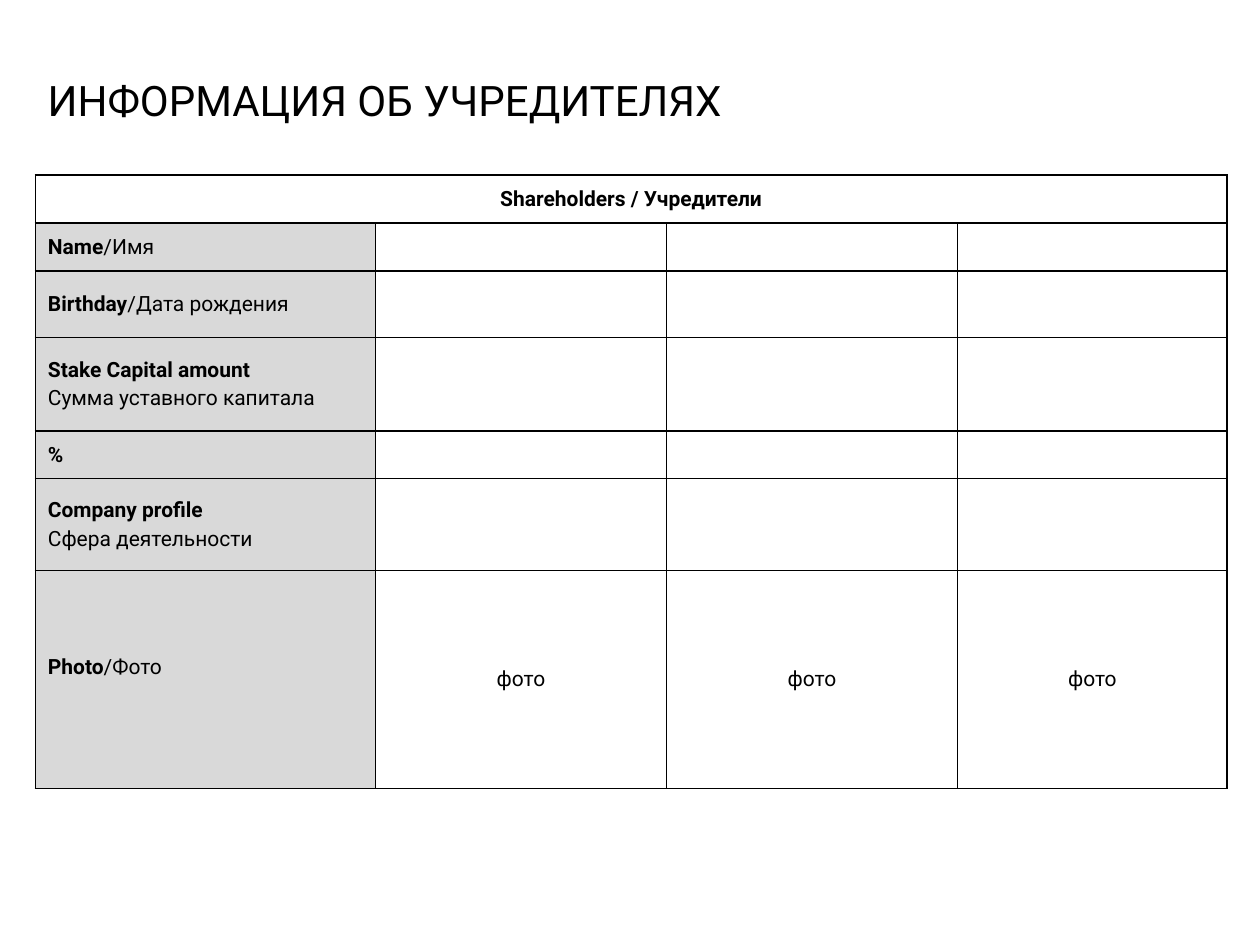
import pptx
import pptx.dml.color
import pptx.enum.text
import pptx.oxml
import pptx.oxml.ns
import pptx.util
from pptx.util import Inches

COLORS = {"ink": "000000", "label": "D9D9D9", "paper": "FFFFFF"}
ALIGN = pptx.enum.text.PP_ALIGN
MIDDLE = pptx.enum.text.MSO_ANCHOR.MIDDLE

COLUMN_WIDTHS = [2.7, 2.31, 2.31, 2.14]
ROW_HEIGHTS = [0.38, 0.38, 0.53, 0.74, 0.38, 0.73, 1.73]

# Each label is a list of lines: (bold English part, regular Russian part)
LABELS = [
    [("Name", "/Имя")],
    [("Birthday", "/Дата рождения")],
    [("Stake Capital amount", ""), ("", "Сумма уставного капитала")],
    [("%", "")],
    [("Company profile", ""), ("", "Сфера деятельности")],
    [("Photo", "/Фото")],
]


def rgb(color):
    return pptx.dml.color.RGBColor.from_string(COLORS[color])


class SlideBuilder:
    font_name = "Roboto"
    body_size = 12

    def __init__(self, slide):
        self.slide = slide

    def style(self, paragraph, size, align=ALIGN.LEFT):
        paragraph.alignment = align
        paragraph.font.name = self.font_name
        paragraph.font.size = pptx.util.Pt(size)
        paragraph.font.color.rgb = rgb("ink")

    def title(self, text, left, top, width, height):
        box = self.slide.shapes.add_textbox(
            Inches(left), Inches(top), Inches(width), Inches(height))
        frame = box.text_frame
        frame.word_wrap = True
        frame.vertical_anchor = MIDDLE
        frame.text = text
        self.style(frame.paragraphs[0], 24)

    def table(self, left, top, widths, heights):
        grid = self.slide.shapes.add_table(
            len(heights), len(widths), Inches(left), Inches(top),
            Inches(sum(widths)), Inches(sum(heights))).table
        for column, width in zip(grid.columns, widths):
            column.width = Inches(width)
        for row, height in zip(grid.rows, heights):
            row.height = Inches(height)
        return grid

    def borders(self, cell):
        properties = cell._tc.get_or_add_tcPr()
        for position, side in enumerate(("lnL", "lnR", "lnT", "lnB")):
            properties.insert(position, pptx.oxml.parse_xml(
                f'<a:{side} {pptx.oxml.ns.nsdecls("a")} w="12700"><a:solidFill>'
                f'<a:srgbClr val="{COLORS["ink"]}"/></a:solidFill></a:{side}>'))

    def cell(self, cell, lines, fill="paper", align=ALIGN.CENTER):
        cell.fill.solid()
        cell.fill.fore_color.rgb = rgb(fill)
        cell.vertical_anchor = MIDDLE
        cell.margin_left = cell.margin_right = Inches(0.1)
        cell.margin_top = cell.margin_bottom = Inches(0.04)
        self.borders(cell)
        frame = cell.text_frame
        for index, line in enumerate(lines):
            paragraph = frame.add_paragraph() if index else frame.paragraphs[0]
            self.style(paragraph, self.body_size, align)
            if index:
                paragraph.space_before = pptx.util.Pt(2.4)
            for text, bold in zip(line, (True, False)):
                if text:
                    run = paragraph.add_run()
                    run.text = text
                    run.font.bold = bold


def main():
    deck = pptx.Presentation()
    deck.slide_width, deck.slide_height = Inches(10), Inches(7.5)
    builder = SlideBuilder(deck.slides.add_slide(deck.slide_layouts[6]))

    # Heading
    builder.title("ИНФОРМАЦИЯ ОБ УЧРЕДИТЕЛЯХ", 0.28, 0.52, 6.78, 0.54)

    # Shareholders table with a merged header row
    shareholders = builder.table(0.28, 1.39, COLUMN_WIDTHS, ROW_HEIGHTS)
    last_column = len(COLUMN_WIDTHS) - 1
    shareholders.cell(0, 0).merge(shareholders.cell(0, last_column))
    for column in range(last_column + 1):
        header = [("Shareholders / Учредители", "")] if column == 0 else [("", "")]
        builder.cell(shareholders.cell(0, column), header)

    # Label column and the fields to fill in
    for row, label in enumerate(LABELS, start=1):
        builder.cell(shareholders.cell(row, 0), label, "label", ALIGN.LEFT)
        field = "фото" if row == len(LABELS) else ""
        for column in range(1, last_column + 1):
            builder.cell(shareholders.cell(row, column), [("", field)])

    # The photo label sits slightly above the middle of its row
    shareholders.cell(len(LABELS), 0).margin_bottom = Inches(0.23)

    deck.save("out.pptx")


if __name__ == "__main__":
    main()
